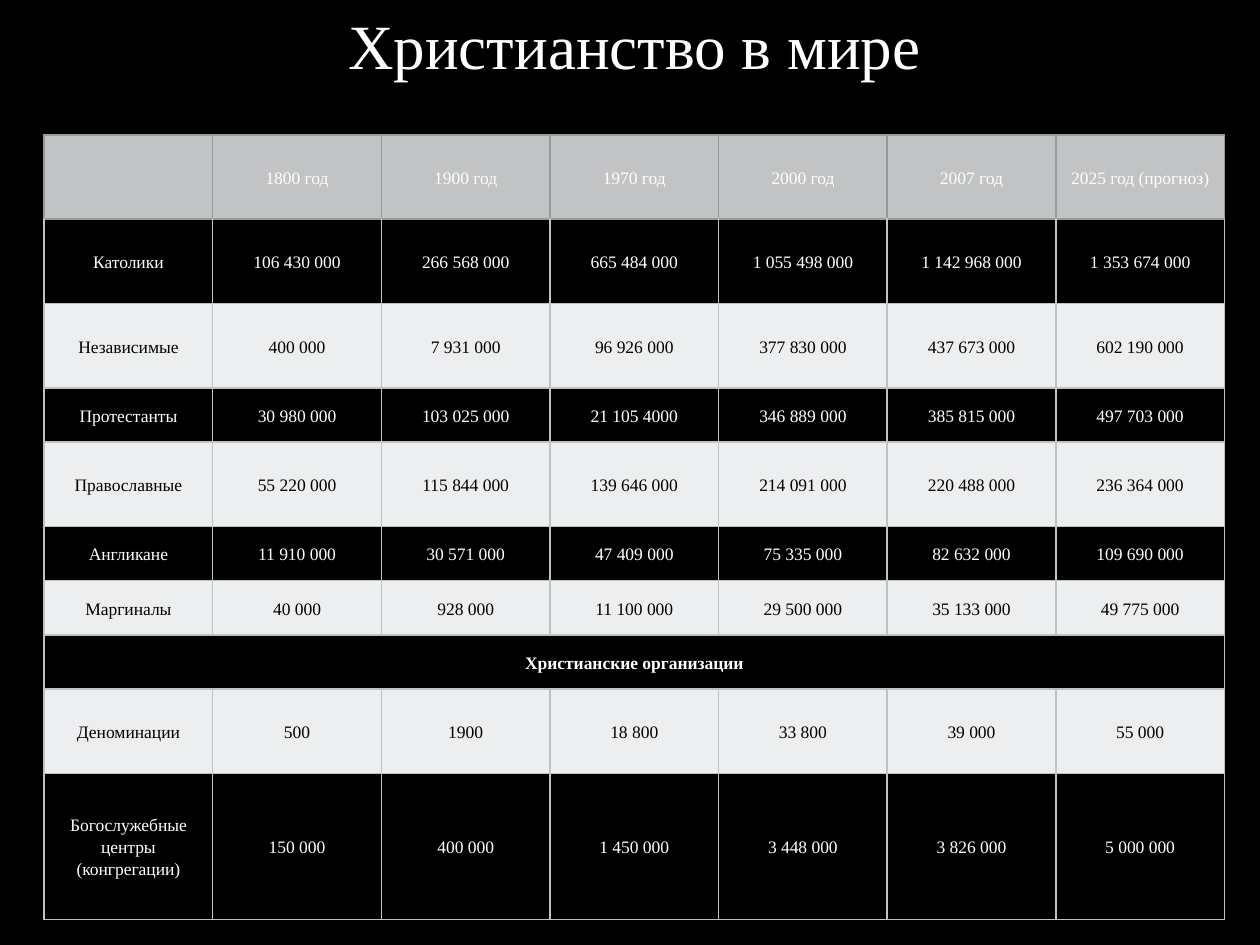
from dataclasses import dataclass

from lxml.etree import SubElement
from pptx import Presentation
from pptx.dml.color import RGBColor
from pptx.enum.text import MSO_ANCHOR as Anchor, PP_ALIGN as Align
from pptx.oxml.ns import qn
from pptx.util import Inches, Pt

FONT = "Times New Roman"
BLACK, WHITE, PALE, GREY = "000000", "FFFFFF", "EDEEEF", "C1C3C5"
LINE, HEADER_LINE = "BDC3C3", "929C9C"
LEFT, WIDTH = Inches(0.35), Inches(9.37)
COLUMN_COUNT = 7
NO_BREAK_SPACE = chr(160)


@dataclass
class Row:
    """A table row: its label, figures and height in inches."""
    label: str
    figures: tuple[str, ...]
    height: float = 0.67


HEADER = Row("", ("1800 год", "1900 год", "1970 год", "2000 год", "2007 год", "2025 год (прогноз)"))
BODY = [
    Row("Католики", ("106 430 000", "266 568 000", "665 484 000",
                     "1 055 498 000", "1 142 968 000", "1 353 674 000")),
    Row("Независимые", ("400 000", "7 931 000", "96 926 000",
                        "377 830 000", "437 673 000", "602 190 000")),
    Row("Протестанты", ("30 980 000", "103 025 000", "21 105 4000",
                        "346 889 000", "385 815 000", "497 703 000"), 0.43),
    Row("Православные", ("55 220 000", "115 844 000", "139 646 000",
                         "214 091 000", "220 488 000", "236 364 000")),
    Row("Англикане", ("11 910 000", "30 571 000", "47 409 000",
                      "75 335 000", "82 632 000", "109 690 000"), 0.43),
    Row("Маргиналы", ("40 000", "928 000", "11 100 000",
                      "29 500 000", "35 133 000", "49 775 000"), 0.43),
    Row("Христианские организации", (), 0.43),
    Row("Деноминации", ("500", "1900", "18 800", "33 800", "39 000", "55 000")),
    Row("Богослужебные центры (конгрегации)", ("150 000", "400 000", "1 450 000",
                                               "3 448 000", "3 826 000", "5 000 000"), 1.16),
]


def rgb(color: str) -> RGBColor:
    """Turn a hex string into a colour."""
    return RGBColor.from_string(color)


def add_text(paragraph, text: str, size: float, color: str, bold: bool = False) -> None:
    """Add one centred run to a paragraph."""
    paragraph.alignment = Align.CENTER
    run = paragraph.add_run()
    run.text = text
    run.font.name = FONT
    run.font.size = Pt(size)
    run.font.bold = bold
    run.font.color.rgb = rgb(color)


def set_borders(cell, color: str, top_color: str) -> None:
    """Draw one-point lines on the four sides of a cell."""
    properties = cell._tc.get_or_add_tcPr()
    for side in ("lnL", "lnR", "lnT", "lnB"):
        line = SubElement(properties, qn(f"a:{side}"), w=str(Pt(1)))
        fill = SubElement(line, qn("a:solidFill"))
        SubElement(fill, qn("a:srgbClr"), val=top_color if side == "lnT" else color)


def format_cell(cell, fill: str, line: str, top_line: str) -> None:
    """Set the borders, fill, margins and anchor of a cell."""
    set_borders(cell, line, top_line)
    cell.fill.solid()
    cell.fill.fore_color.rgb = rgb(fill)
    cell.margin_left = cell.margin_right = Inches(0.07)
    cell.margin_top = cell.margin_bottom = Inches(0.07)
    cell.vertical_anchor = Anchor.MIDDLE


def fill_row(table, index: int, row: Row) -> None:
    """Write and format one row of the table."""
    is_header = index == 0
    is_pale = not is_header and index % 2 == 0
    fill = GREY if is_header else PALE if is_pale else BLACK
    line = HEADER_LINE if is_header else LINE
    top_line = HEADER_LINE if index <= 1 else LINE
    table.rows[index].height = Inches(row.height)
    for column in range(COLUMN_COUNT):
        format_cell(table.cell(index, column), fill, line, top_line)
    if not row.figures:
        table.cell(index, 0).merge(table.cell(index, COLUMN_COUNT - 1))
    figures = row.figures if is_header else [
        figure.replace(" ", NO_BREAK_SPACE) for figure in row.figures]
    for column, text in enumerate((row.label, *figures)):
        if text:
            paragraph = table.cell(index, column).text_frame.paragraphs[0]
            paragraph.line_spacing = 1.15
            add_text(paragraph, text, 10, BLACK if is_pale else WHITE, bold=not row.figures)


def add_title(slide, text: str) -> None:
    """Place and write the slide title."""
    title = slide.shapes.title
    title.left, title.top, title.width, title.height = LEFT, 0, WIDTH, Inches(0.71)
    title.text_frame.word_wrap = True
    title.text_frame.vertical_anchor = Anchor.TOP
    add_text(title.text_frame.paragraphs[0], text, 36, WHITE)


def add_statistics(slide, rows: list[Row]) -> None:
    """Add the table of figures by year."""
    height = Inches(sum(row.height for row in rows))
    table = slide.shapes.add_table(
        len(rows), COLUMN_COUNT, LEFT, Inches(1.07), WIDTH, height).table
    table.first_row = table.horz_banding = False
    for index, row in enumerate(rows):
        fill_row(table, index, row)


def main() -> None:
    """Build the slide and save it."""
    presentation = Presentation()
    presentation.slide_width, presentation.slide_height = Inches(10), Inches(7.5)
    slide = presentation.slides.add_slide(presentation.slide_layouts[5])
    slide.background.fill.solid()
    slide.background.fill.fore_color.rgb = rgb(BLACK)
    add_statistics(slide, [HEADER, *BODY])
    add_title(slide, "Христианство в мире")
    presentation.save("out.pptx")


if __name__ == "__main__":
    main()
